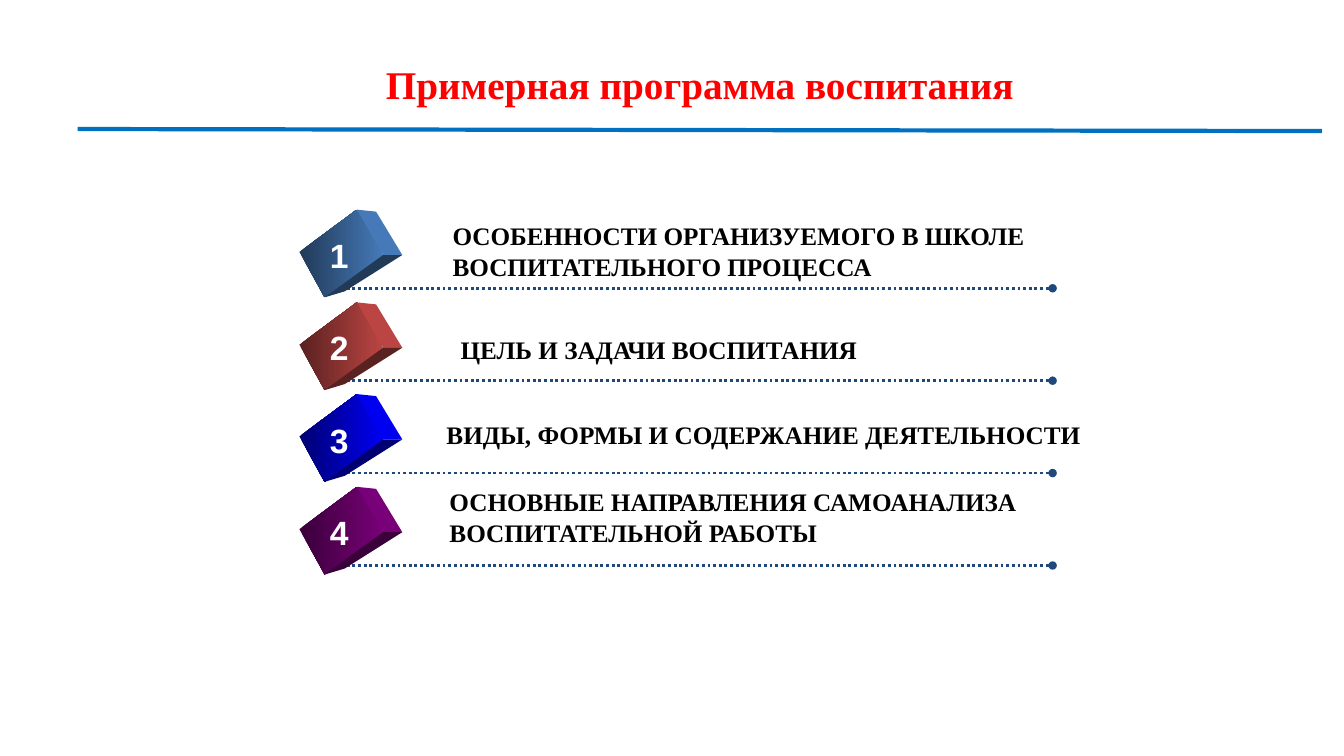
from lxml.etree import SubElement
from pptx import Presentation
from pptx.dml.color import RGBColor
from pptx.enum.dml import MSO_LINE
from pptx.enum.shapes import MSO_CONNECTOR
from pptx.enum.text import MSO_ANCHOR, PP_ALIGN
from pptx.oxml.ns import qn
from pptx.util import Inches, Pt

HUES = {
    "title": "FF0000", "rule": "0070C0", "dots": "1F497D",
    "text": "000000", "digit": "FFFFFF",
    "steel": "4F81BD", "brick": "C0504D", "blue": "0000FF", "plum": "800080",
}
TOP, STEP = 2.14, 2.75 / 3  # first row and row pitch, inches

# Faces of a tilted block, in hundredths of an inch from the row's top
FACES = {
    "front": [(297, 36), (354, -6), (380, 39), (322, 81)],
    "side": [(354, -6), (373, -4), (399, 39), (380, 39)],
    "base": [(322, 81), (380, 39), (399, 39), (342, 75)],
}

# Hue, lines of text, then left, offset from the row's top, width and height
ROWS = [
    ("steel", ["ОСОБЕННОСТИ ОРГАНИЗУЕМОГО В ШКОЛЕ", "ВОСПИТАТЕЛЬНОГО ПРОЦЕССА"],
     (4.39, 0, 5.99, 0.71)),
    ("brick", ["ЦЕЛЬ И ЗАДАЧИ ВОСПИТАНИЯ"], (4.47, 0.21, 6.1, 0.4)),
    ("blue", ["ВИДЫ, ФОРМЫ И СОДЕРЖАНИЕ ДЕЯТЕЛЬНОСТИ"], (4.33, 0.14, 6.55, 0.4)),
    ("plum", ["ОСНОВНЫЕ НАПРАВЛЕНИЯ САМОАНАЛИЗА", "ВОСПИТАТЕЛЬНОЙ РАБОТЫ"],
     (4.36, -0.11, 5.94, 0.71)),
]

deck = Presentation()
deck.slide_width, deck.slide_height = Inches(13.33), Inches(7.5)
slide = deck.slides.add_slide(deck.slide_layouts[6])
shapes = slide.shapes


def write(lines, box, size=18, hue="text", font="Times New Roman",
          align=PP_ALIGN.LEFT, anchor=MSO_ANCHOR.TOP, wrap=False):
    frame = shapes.add_textbox(*map(Inches, box)).text_frame
    frame.word_wrap, frame.vertical_anchor = wrap, anchor
    for i, line in enumerate(lines):
        para = frame.add_paragraph() if i else frame.paragraphs[0]
        para.alignment = align
        run = para.add_run()
        run.text = line
        run.font.name, run.font.size, run.font.bold = font, Pt(size), True
        run.font.color.rgb = RGBColor.from_string(HUES[hue])


def rule(x1, y1, x2, y2, hue, width):
    link = shapes.add_connector(MSO_CONNECTOR.STRAIGHT, *map(Inches, (x1, y1, x2, y2)))
    link.line.color.rgb = RGBColor.from_string(HUES[hue])
    link.line.width = Pt(width)
    SubElement(link._element.spPr, qn("a:effectLst"))
    return link.line


write(["Примерная программа воспитания"], (0.94, 0.44, 12, 0.78), size=28,
      hue="title", align=PP_ALIGN.CENTER, anchor=MSO_ANCHOR.MIDDLE, wrap=True)
rule(0.77, 1.28, 13.11, 1.3, "rule", 3)

for i, (hue, lines, (left, drop, width, height)) in enumerate(ROWS):
    top = TOP + i * STEP
    dots = rule(3.44, top + 0.72, 10.44, top + 0.72, "dots", 2)
    dots.dash_style = MSO_LINE.ROUND_DOT
    SubElement(dots._ln, qn("a:tailEnd"), type="oval")

    tone = RGBColor.from_string(HUES[hue])
    for face, spots in FACES.items():
        first, *rest = [(x, y + round(top * 100)) for x, y in spots]
        pen = shapes.build_freeform(*first, scale=Inches(0.01))
        pen.add_line_segments(rest, close=True)
        block = pen.convert_to_shape()
        block.shadow.inherit = False
        block.line.fill.background()
        if face == "front":
            block.fill.gradient()
            block.fill.gradient_angle = 0
            for stop, shade in zip(block.fill.gradient_stops, (-0.55, -0.06)):
                stop.color.rgb = tone
                stop.color.brightness = shade
        else:
            block.fill.solid()
            block.fill.fore_color.rgb = tone
            block.fill.fore_color.brightness = -0.06 if face == "side" else -0.55

    write([str(i + 1)], (3.17, top + 0.14, 0.39, 0.5), size=24, hue="digit",
          font="Arial", align=PP_ALIGN.CENTER)
    write(lines, (left, top + drop, width, height), wrap=len(lines) == 1 and hue == "brick")

deck.save("out.pptx")
